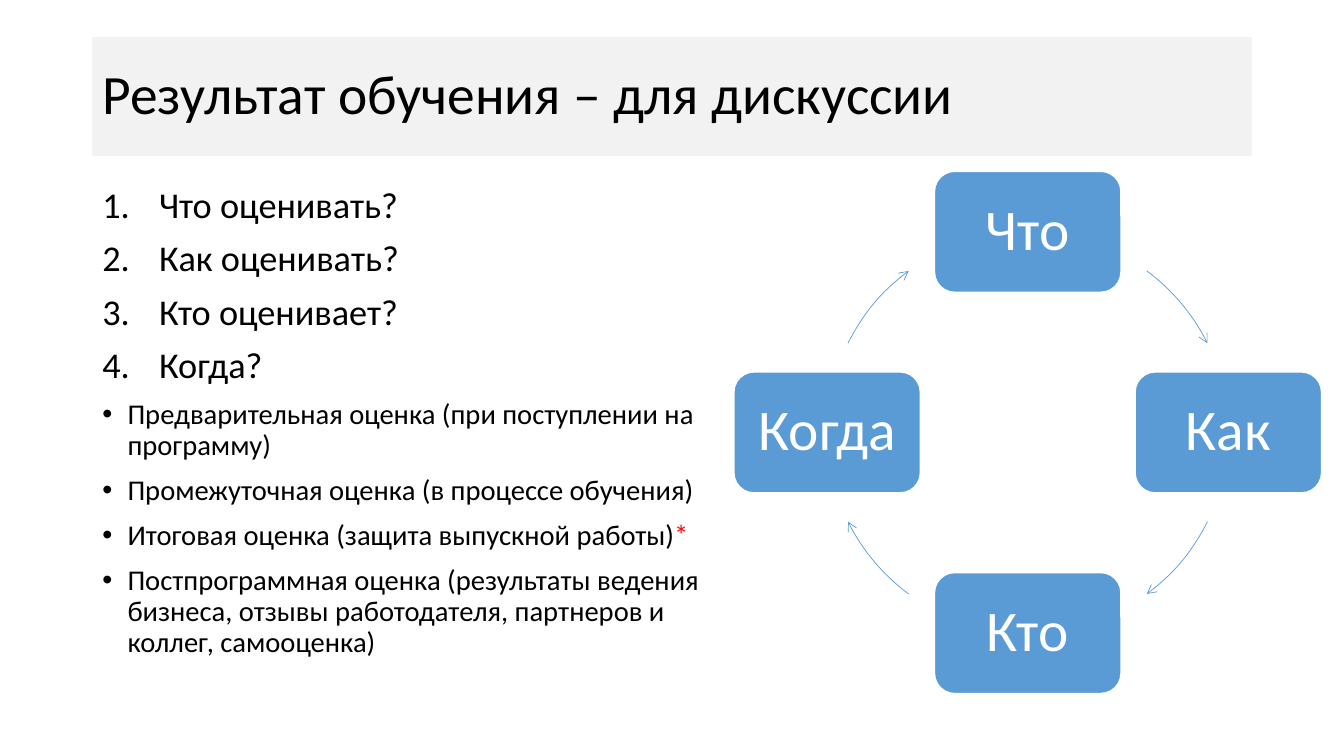
import math
from dataclasses import dataclass

from lxml import etree
from pptx import Presentation
from pptx.dml.color import RGBColor
from pptx.enum.shapes import MSO_SHAPE
from pptx.enum.text import MSO_ANCHOR, MSO_AUTO_SIZE, PP_ALIGN
from pptx.oxml.ns import qn
from pptx.util import Pt

ARC, ROUNDED = MSO_SHAPE.ARC, MSO_SHAPE.ROUNDED_RECTANGLE
LEFT, CENTER = PP_ALIGN.LEFT, PP_ALIGN.CENTER
MIDDLE, TOP = MSO_ANCHOR.MIDDLE, MSO_ANCHOR.TOP
NO_FIT = MSO_AUTO_SIZE.NONE
TITLE_ONLY = 5


@dataclass(frozen=True)
class Theme:
    font: str = "Calibri"
    black: str = "000000"
    white: str = "FFFFFF"
    red: str = "FF0000"
    blue: str = "5B9BD5"
    title_fill: str = "F2F2F2"
    title_size: float = 39.6
    question_size: float = 25.9
    stage_size: float = 20.4
    node_size: float = 41


THEME = Theme()
QUESTIONS = ["Что оценивать?", "Как оценивать?", "Кто оценивает?", "Когда?"]
STAGES = [
    [("Предварительная оценка (при поступлении на программу)", THEME.black)],
    [("Промежуточная оценка (в процессе обучения)", THEME.black)],
    [("Итоговая оценка (защита выпускной работы)", THEME.black), ("*", THEME.red)],
    [("Постпрограммная оценка (результаты ведения бизнеса, отзывы работодателя, "
      "партнеров и коллег, самооценка)", THEME.black)],
]
CYCLE = ["Что", "Как", "Кто", "Когда"]


def rgb(value):
    return RGBColor.from_string(value)


def write(paragraph, pieces, *, size, align=LEFT, before=0):
    """Add runs given as (text, colour) pairs to a paragraph."""
    paragraph.alignment = align
    paragraph.line_spacing = 0.9
    paragraph.space_before = Pt(before)
    for text, color in pieces:
        run = paragraph.add_run()
        run.text = text
        run.font.name = THEME.font
        run.font.size = Pt(size)
        run.font.color.rgb = rgb(color)


def prepare_frame(frame, anchor, margin_x=7.2, margin_y=3.6):
    frame.word_wrap = True
    frame.auto_size = NO_FIT
    frame.vertical_anchor = anchor
    frame.margin_left = frame.margin_right = Pt(margin_x)
    frame.margin_top = frame.margin_bottom = Pt(margin_y)
    return frame


def set_bullet(paragraph, indent, tag, **attributes):
    properties = paragraph._p.get_or_add_pPr()
    properties.set("marL", str(Pt(indent)))
    properties.set("indent", str(-Pt(indent)))
    if tag == "a:buChar":
        etree.SubElement(properties, qn("a:buFont"), typeface="Arial")
    etree.SubElement(properties, qn(tag), **attributes)


def fill_title(slide, left, top, width, height):
    title = slide.shapes.title
    title.left, title.top = Pt(left), Pt(top)
    title.width, title.height = Pt(width), Pt(height)
    title.fill.solid()
    title.fill.fore_color.rgb = rgb(THEME.title_fill)
    frame = prepare_frame(title.text_frame, MIDDLE)
    write(frame.paragraphs[0], [("Результат обучения – для дискуссии", THEME.black)],
          size=THEME.title_size)


def add_question_list(slide, left, top, width, height):
    box = slide.shapes.add_textbox(Pt(left), Pt(top), Pt(width), Pt(height))
    frame = prepare_frame(box.text_frame, TOP)
    paragraph = frame.paragraphs[0]
    for index, question in enumerate(QUESTIONS):
        if index:
            paragraph = frame.add_paragraph()
        write(paragraph, [(question, THEME.black)], size=THEME.question_size, before=10)
        set_bullet(paragraph, 40.5, "a:buAutoNum", type="arabicPeriod")
    for stage in STAGES:
        paragraph = frame.add_paragraph()
        write(paragraph, stage, size=THEME.stage_size, before=10)
        set_bullet(paragraph, 18, "a:buChar", char="•")


def add_node(slide, center_x, center_y, width, height, label):
    node = slide.shapes.add_shape(ROUNDED, Pt(center_x - width / 2),
                                  Pt(center_y - height / 2), Pt(width), Pt(height))
    node.shadow.inherit = False
    node.fill.solid()
    node.fill.fore_color.rgb = rgb(THEME.blue)
    node.line.color.rgb = rgb(THEME.white)
    node.line.width = Pt(1)
    frame = prepare_frame(node.text_frame, MIDDLE, 12, 12)
    write(frame.paragraphs[0], [(label, THEME.white)], size=THEME.node_size, align=CENTER)


def add_arc_arrow(slide, center_x, center_y, radius, start, end):
    """Draw a clockwise arc between two angles in degrees, with an open arrowhead."""
    arc = slide.shapes.add_shape(ARC, Pt(center_x - radius), Pt(center_y - radius),
                                 Pt(2 * radius), Pt(2 * radius))
    # An adjustment of 1 stands for 100000 units; a degree has 60000.
    arc.adjustments[0], arc.adjustments[1] = start * 0.6, end * 0.6
    arc.shadow.inherit = False
    arc.fill.background()
    arc.line.color.rgb = rgb(THEME.blue)
    arc.line.width = Pt(0.5)
    etree.SubElement(arc.line._get_or_add_ln(), qn("a:tailEnd"), type="arrow")


def add_cycle(slide, left, top, width, height):
    node_width, node_height = 133.2, 86.4
    radius = (width - node_width) / 2
    center_x, center_y = left + width / 2, top + height / 2
    half_sweep = 13.6
    arc_middles = [320, 40, 140, 220]
    for index, (label, middle) in enumerate(zip(CYCLE, arc_middles)):
        angle = math.radians(90 * index - 90)
        add_node(slide, center_x + radius * math.cos(angle),
                 center_y + radius * math.sin(angle), node_width, node_height, label)
        add_arc_arrow(slide, center_x, center_y, radius,
                      middle - half_sweep, middle + half_sweep)


def main():
    presentation = Presentation()
    presentation.slide_width, presentation.slide_height = Pt(960), Pt(540)
    slide = presentation.slides.add_slide(presentation.slide_layouts[TITLE_ONLY])
    fill_title(slide, 66, 26.6, 828, 85)
    add_question_list(slide, 66, 130.3, 454.3, 355.7)
    add_cycle(slide, 524.2, 122.4, 419.8, 373)
    presentation.save("out.pptx")


if __name__ == "__main__":
    main()
